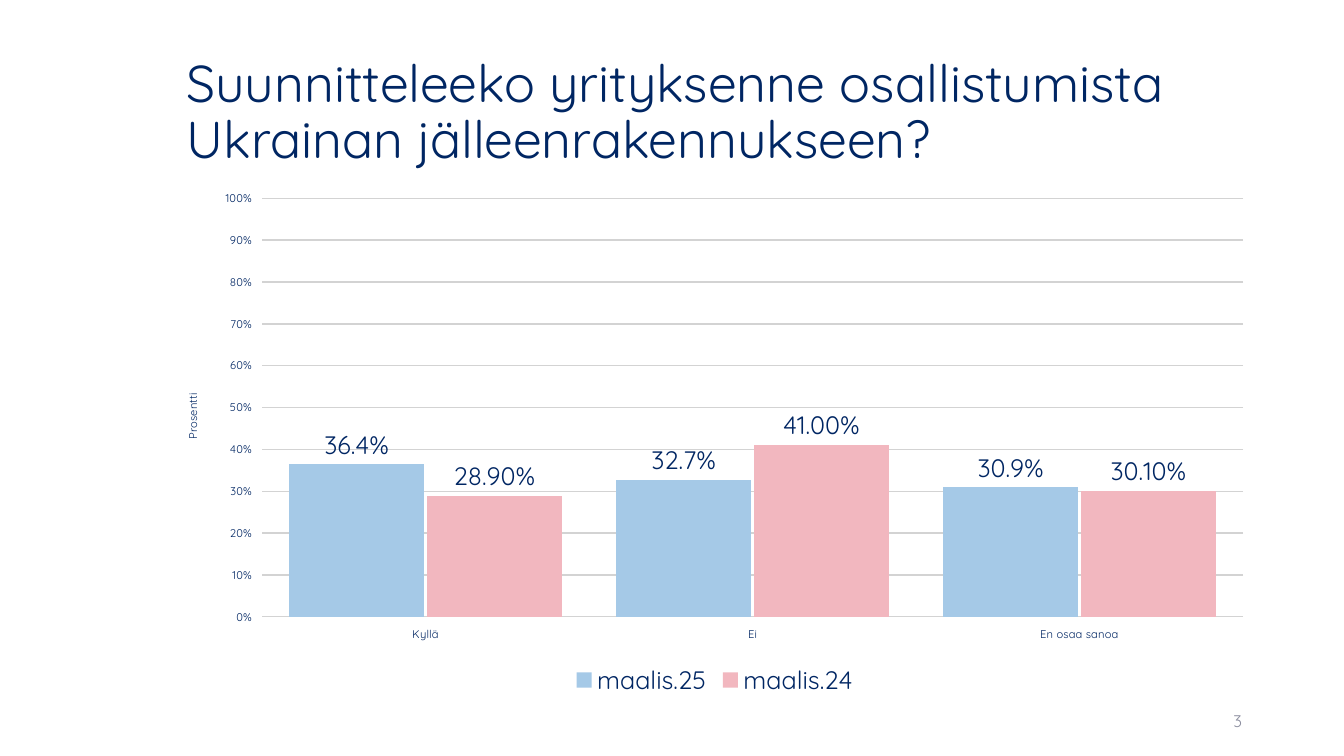
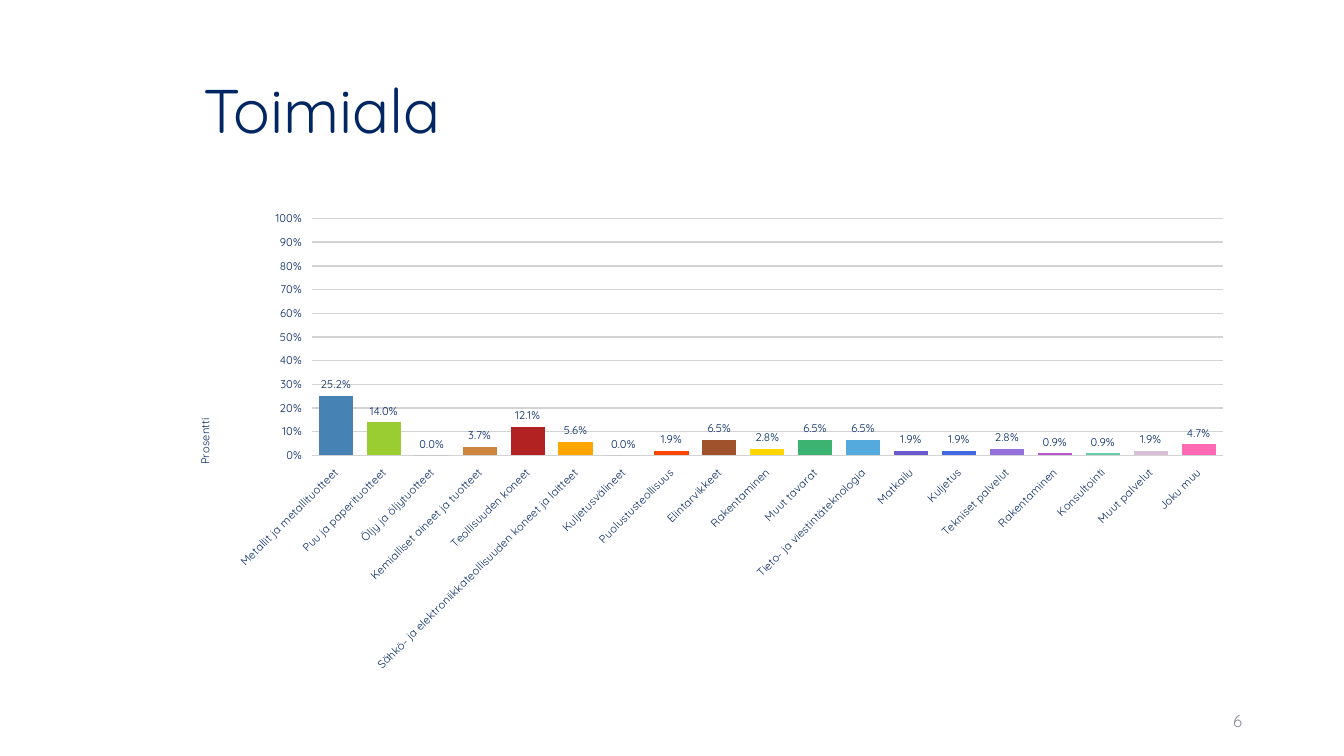
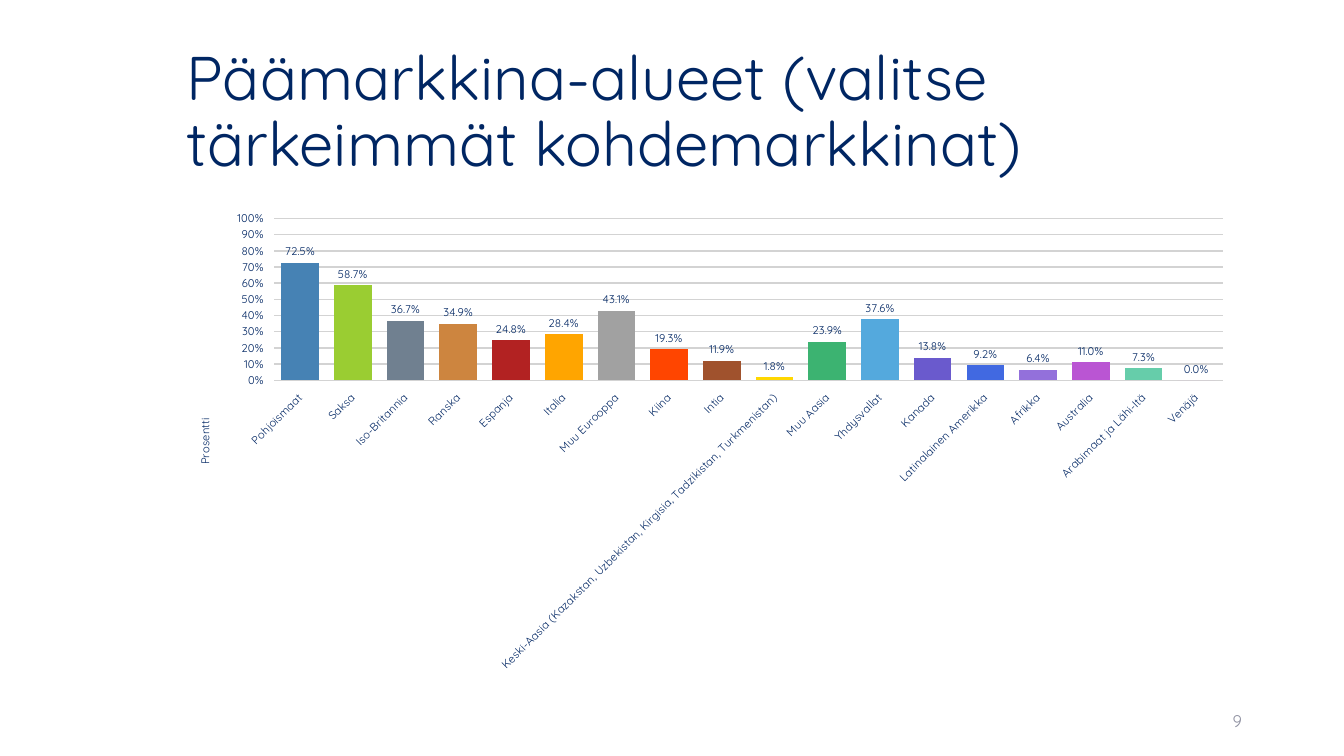
from pptx import Presentation
from pptx.chart.data import CategoryChartData
from pptx.dml.color import RGBColor
from pptx.enum.chart import XL_CHART_TYPE as ChartType
from pptx.enum.chart import XL_LABEL_POSITION as LabelPosition
from pptx.enum.chart import XL_LEGEND_POSITION as LegendPosition
from pptx.enum.text import MSO_ANCHOR as Anchor
from pptx.enum.text import MSO_AUTO_SIZE as AutoSize
from pptx.enum.text import PP_ALIGN as Align
from pptx.util import Cm, Pt

# Shared look
FONT = "Quicksand"
NAVY, GREY, GRID = "002663", "8C8E9F", "D3D3D3"
BAR_COLORS = [
    "4682B4", "9ACD32", "708090", "CD853F", "B22222", "FFA500", "A1A1A1",
    "FF4500", "A0522D", "FFD700", "3CB371", "54A9DD", "6A5ACD", "4169E1",
    "9370DB", "BA55D3", "66CDAA", "D8BFD8", "FF69B4",
]
TITLE_BOX = (4.45, 1.02, 26.9, 3.68)
NUMBER_BOX = (23.93, 17.65, 7.62, 1.02)
WIDE_CHART_BOX = (4.14, 4.55, 27.74, 13.11)
CHART_BOX = (4.45, 5.08, 26.9, 12.09)
INSET = 0.25

# Content: each row is a category followed by one value per series
PARTICIPATION = [
    ("Kyllä", 0.364, 0.289),
    ("Ei", 0.327, 0.41),
    ("En osaa sanoa", 0.309, 0.301),
]
INDUSTRIES = [
    ("Metallit ja metallituotteet", 0.252),
    ("Puu ja paperituotteet", 0.14),
    ("Öljy ja öljytuotteet", 0),
    ("Kemialliset aineet ja tuotteet", 0.037),
    ("Teollisuuden koneet", 0.121),
    ("Sähkö- ja elektroniikkateollisuuden koneet ja laitteet", 0.056),
    ("Kuljetusvälineet", 0),
    ("Puolustusteollisuus", 0.019),
    ("Elintarvikkeet", 0.065),
    ("Rakentaminen", 0.028),
    ("Muut tavarat", 0.065),
    ("Tieto- ja viestintäteknologia", 0.065),
    ("Matkailu", 0.019),
    ("Kuljetus", 0.019),
    ("Tekniset palvelut", 0.028),
    ("Rakentaminen", 0.009),
    ("Konsultointi", 0.009),
    ("Muut palvelut", 0.019),
    ("Joku muu", 0.047),
]
MARKETS = [
    ("Pohjoismaat", 0.725),
    ("Saksa", 0.587),
    ("Iso-Britannia", 0.367),
    ("Ranska", 0.349),
    ("Espanja", 0.248),
    ("Italia", 0.284),
    ("Muu Eurooppa", 0.431),
    ("Kiina", 0.193),
    ("Intia", 0.119),
    ("Keski-Aasia (Kazakstan, Uzbekistan, Kirgisia, Tadzikistan, Turkmenistan)", 0.018),
    ("Muu Aasia", 0.239),
    ("Yhdysvallat", 0.376),
    ("Kanada", 0.138),
    ("Latinalainen Amerikka", 0.092),
    ("Afrikka", 0.064),
    ("Australia", 0.11),
    ("Arabimaat ja Lähi-Itä", 0.073),
    ("Venäjä", 0),
]

# Series: name, fill (None colours each bar separately), label format
COMPARED_YEARS = [("maalis.25", "A5C9E7", "0.0%"), ("maalis.24", "F2B7BF", "0.00%")]
SINGLE_SERIES = [("Series 1", None, "0.0%")]

SLIDES = [
    dict(title="Suunnitteleeko yrityksenne osallistumista Ukrainan jälleenrakennukseen?",
         title_size=37, indent=0, number=3, rows=PARTICIPATION,
         series=COMPARED_YEARS, box=WIDE_CHART_BOX, label_size=18),
    dict(title="Toimiala", title_size=44, indent=0.43, number=6, rows=INDUSTRIES,
         series=SINGLE_SERIES, box=CHART_BOX, label_size=8),
    dict(title="Päämarkkina-alueet (valitse tärkeimmät kohdemarkkinat)",
         title_size=44, indent=0, number=9, rows=MARKETS,
         series=SINGLE_SERIES, box=CHART_BOX, label_size=8),
]


def rgb(color):
    return RGBColor.from_string(color)


def lengths(box):
    return [Cm(value) for value in box]


def style_font(font, size, color=NAVY):
    font.name = FONT
    font.size = Pt(size)
    font.bold = False
    font.color.rgb = rgb(color)


def paint(fill, color):
    fill.solid()
    fill.fore_color.rgb = rgb(color)


def add_title(slide, text, size, indent):
    title = slide.shapes.title
    title.left, title.top, title.width, title.height = lengths(TITLE_BOX)
    frame = title.text_frame
    frame.text = text
    frame.auto_size = AutoSize.NONE
    frame.vertical_anchor = Anchor.MIDDLE
    frame.margin_left = Cm(INSET + indent)
    paragraph = frame.paragraphs[0]
    paragraph.alignment = Align.LEFT
    paragraph.line_spacing = 0.9
    style_font(paragraph.runs[0].font, size)


def add_number(slide, number):
    frame = slide.shapes.add_textbox(*lengths(NUMBER_BOX)).text_frame
    frame.text = str(number)
    frame.word_wrap = True
    frame.vertical_anchor = Anchor.MIDDLE
    paragraph = frame.paragraphs[0]
    paragraph.alignment = Align.RIGHT
    paragraph.space_after = Pt(6)
    style_font(paragraph.runs[0].font, 12, GREY)


def style_axes(chart, slanted):
    for axis in (chart.category_axis, chart.value_axis):
        style_font(axis.tick_labels.font, 8)
        axis.format.line.fill.background()
    if slanted:
        body = chart.element.xpath(".//c:catAx/c:txPr/a:bodyPr")[0]
        body.set("rot", "-2700000")
        body.set("vert", "horz")

    axis = chart.value_axis
    axis.minimum_scale, axis.maximum_scale, axis.major_unit = 0, 1, 0.1
    axis.tick_labels.number_format = "0%"
    axis.tick_labels.number_format_is_linked = False
    axis.has_major_gridlines = True
    gridline = axis.major_gridlines.format.line
    gridline.color.rgb = rgb(GRID)
    gridline.width = Pt(1)
    axis.axis_title.text_frame.text = "Prosentti"
    style_font(axis.axis_title.text_frame.paragraphs[0].runs[0].font, 8)


def style_series(series, color, label_format, label_size):
    series.invert_if_negative = False
    paint(series.format.fill, color or BAR_COLORS[0])
    if color is None:
        for index, bar_color in zip(range(len(series.values)), BAR_COLORS):
            paint(series.points[index].format.fill, bar_color)
    labels = series.data_labels
    labels.show_value = True
    labels.number_format = label_format
    labels.number_format_is_linked = False
    labels.position = LabelPosition.OUTSIDE_END
    style_font(labels.font, label_size)


def add_bar_chart(slide, rows, series_styles, box, label_size):
    categories, *columns = zip(*rows)
    data = CategoryChartData(number_format="0.0%")
    data.categories = categories
    for (name, _, _), values in zip(series_styles, columns):
        data.add_series(name, values)
    chart = slide.shapes.add_chart(
        ChartType.COLUMN_CLUSTERED, *lengths(box), data).chart
    style_font(chart.font, 18)
    chart.has_title = False

    several = len(series_styles) > 1
    chart.has_legend = several
    if several:
        chart.legend.position = LegendPosition.BOTTOM
        chart.legend.include_in_layout = False
        style_font(chart.legend.font, 18)

    plot = chart.plots[0]
    plot.gap_width, plot.overlap = 40, -2
    plot.vary_by_categories = False
    style_axes(chart, slanted=not several)
    for series, (_, color, label_format) in zip(plot.series, series_styles):
        style_series(series, color, label_format, label_size)


def main():
    presentation = Presentation()
    presentation.slide_width, presentation.slide_height = Cm(33.87), Cm(19.05)
    title_only = presentation.slide_layouts[5]
    for content in SLIDES:
        slide = presentation.slides.add_slide(title_only)
        add_title(slide, content["title"], content["title_size"], content["indent"])
        add_number(slide, content["number"])
        add_bar_chart(slide, content["rows"], content["series"],
                      content["box"], content["label_size"])
    presentation.save("out.pptx")


if __name__ == "__main__":
    main()
